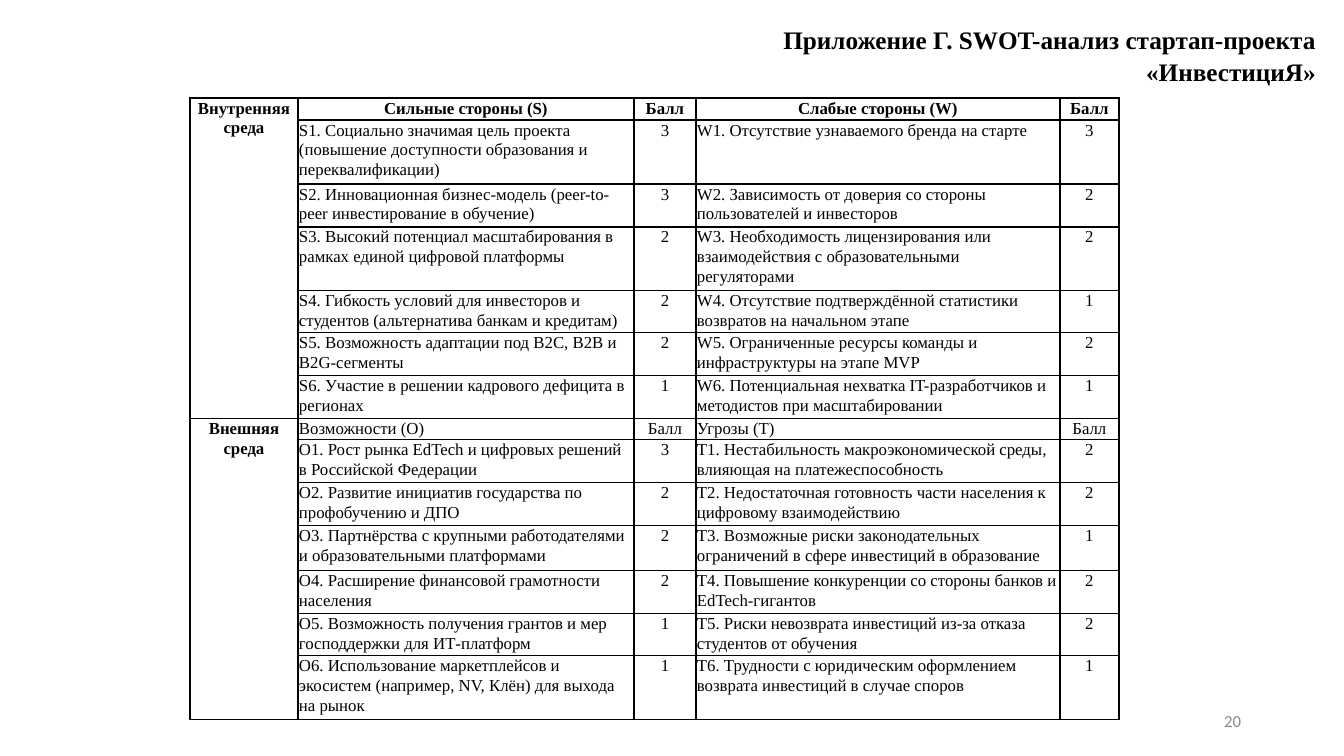
from collections import namedtuple
from lxml import etree
from pptx import Presentation
from pptx.dml.color import RGBColor
from pptx.enum.text import MSO_ANCHOR, MSO_AUTO_SIZE, PP_ALIGN
from pptx.oxml.ns import qn
from pptx.util import Emu, Pt

LEFT, MID, RIGHT = PP_ALIGN.LEFT, PP_ALIGN.CENTER, PP_ALIGN.RIGHT
TOP, MIDDLE = MSO_ANCHOR.TOP, MSO_ANCHOR.MIDDLE
FIXED = MSO_AUTO_SIZE.NONE

WIDE, HIGH = 1344, 756
SCALE = 12192000 / WIDE

Box = namedtuple("Box", "x y w h")
Theme = namedtuple("Theme", "serif sans ink gray head body lead rule")
THEME = Theme(serif="Times New Roman", sans="Calibri", ink="000000",
              gray="8C8C8C", head=18, body=12, lead=1.06, rule=1)

COLS = [108, 336, 62, 364, 59]
ROWS = [22, 64, 43, 64, 42, 43, 43, 21, 43, 43, 45, 43, 42, 64]
INNER = [
    ("Сильные стороны (S)", "Балл", "Слабые стороны (W)", "Балл"),
    ("S1. Социально значимая цель проекта (повышение доступности образования и переквалификации)", "3",
     "W1. Отсутствие узнаваемого бренда на старте", "3"),
    ("S2. Инновационная бизнес-модель (peer-to-peer инвестирование в обучение)", "3",
     "W2. Зависимость от доверия со стороны пользователей и инвесторов", "2"),
    ("S3. Высокий потенциал масштабирования в рамках единой цифровой платформы", "2",
     "W3. Необходимость лицензирования или взаимодействия с образовательными регуляторами", "2"),
    ("S4. Гибкость условий для инвесторов и студентов (альтернатива банкам и кредитам)", "2",
     "W4. Отсутствие подтверждённой статистики возвратов на начальном этапе", "1"),
    ("S5. Возможность адаптации под B2C, B2B и B2G-сегменты", "2",
     "W5. Ограниченные ресурсы команды и инфраструктуры на этапе MVP", "2"),
    ("S6. Участие в решении кадрового дефицита в регионах", "1",
     "W6. Потенциальная нехватка IT-разработчиков и методистов при масштабировании", "1"),
]
OUTER = [
    ("Возможности (O)", "Балл", "Угрозы (T)", "Балл"),
    ("O1. Рост рынка EdTech и цифровых решений в Российской Федерации", "3",
     "T1. Нестабильность макроэкономической среды, влияющая на платежеспособность", "2"),
    ("O2. Развитие инициатив государства по профобучению и ДПО", "2",
     "T2. Недостаточная готовность части населения к цифровому взаимодействию", "2"),
    ("O3. Партнёрства с крупными работодателями и образовательными платформами", "2",
     "T3. Возможные риски законодательных ограничений в сфере инвестиций в образование", "1"),
    ("O4. Расширение финансовой грамотности населения", "2",
     "T4. Повышение конкуренции со стороны банков и EdTech-гигантов", "2"),
    ("O5. Возможность получения грантов и мер господдержки для ИТ-платформ", "1",
     "T5. Риски невозврата инвестиций из-за отказа студентов от обучения", "2"),
    ("O6. Использование маркетплейсов и экосистем (например, NV, Клён) для выхода на рынок", "1",
     "T6. Трудности с юридическим оформлением возврата инвестиций в случае споров", "1"),
]
PARTS = [("Внутренняя среда", INNER), ("Внешняя среда", OUTER)]


def px(n):
    return Emu(round(n * SCALE))


def write(frame, text, size=THEME.body, face=THEME.serif, ink=THEME.ink,
          bold=False, align=LEFT, lead=THEME.lead):
    para = frame.paragraphs[0]
    para.alignment = align
    para.line_spacing = lead
    run = para.add_run()
    run.text = text
    font = run.font
    font.size, font.name, font.bold = Pt(size), face, bold
    font.color.rgb = RGBColor.from_string(ink)


def rule(cell):
    """Draw the four borders of a cell."""
    props = cell._tc.get_or_add_tcPr()
    for i, side in enumerate(("a:lnL", "a:lnR", "a:lnT", "a:lnB")):
        line = etree.Element(qn(side), w=str(Pt(THEME.rule)))
        fill = etree.SubElement(line, qn("a:solidFill"))
        etree.SubElement(fill, qn("a:srgbClr"), val=THEME.ink)
        props.insert(i, line)


def title(slide, box):
    shape = slide.shapes.title
    shape.left, shape.top, shape.width, shape.height = map(px, box)
    frame = shape.text_frame
    frame.word_wrap, frame.auto_size = True, FIXED
    frame.vertical_anchor = TOP
    write(frame, "Приложение Г. SWOT-анализ стартап-проекта «ИнвестициЯ»",
          size=THEME.head, bold=True, align=RIGHT)


def swot(slide, box):
    shape = slide.shapes.add_table(len(ROWS), len(COLS), *map(px, box))
    table = shape.table
    table.first_row = table.horz_banding = False
    for col, w in zip(table.columns, COLS):
        col.width = px(w)
    for row, h in zip(table.rows, ROWS):
        row.height = px(h)
    for cell in table.iter_cells():
        cell.margin_left = cell.margin_right = px(1)
        cell.margin_top = cell.margin_bottom = 0
        cell.fill.background()
        rule(cell)
    top = 0
    for name, rows in PARTS:
        side = table.cell(top, 0)
        side.merge(table.cell(top + len(rows) - 1, 0))
        write(side.text_frame, name, bold=True, align=MID)
        for r, row in enumerate(rows, top):
            for c, text in enumerate(row, 1):
                mid = r == 0 or c % 2 == 0
                write(table.cell(r, c).text_frame, text, bold=r == 0,
                      align=MID if mid else LEFT)
        top += len(rows)


def number(slide, box):
    frame = slide.shapes.add_textbox(*map(px, box)).text_frame
    frame.word_wrap = True
    frame.vertical_anchor = MIDDLE
    write(frame, "20", face=THEME.sans, ink=THEME.gray, align=RIGHT, lead=1.0)


def main():
    deck = Presentation()
    deck.slide_width, deck.slide_height = px(WIDE), px(HIGH)
    slide = deck.slides.add_slide(deck.slide_layouts[5])
    title(slide, Box(654, 17, 672, 72))
    swot(slide, Box(190, 98, sum(COLS), sum(ROWS)))
    number(slide, Box(949, 701, 302, 40))
    deck.save("out.pptx")


if __name__ == "__main__":
    main()
